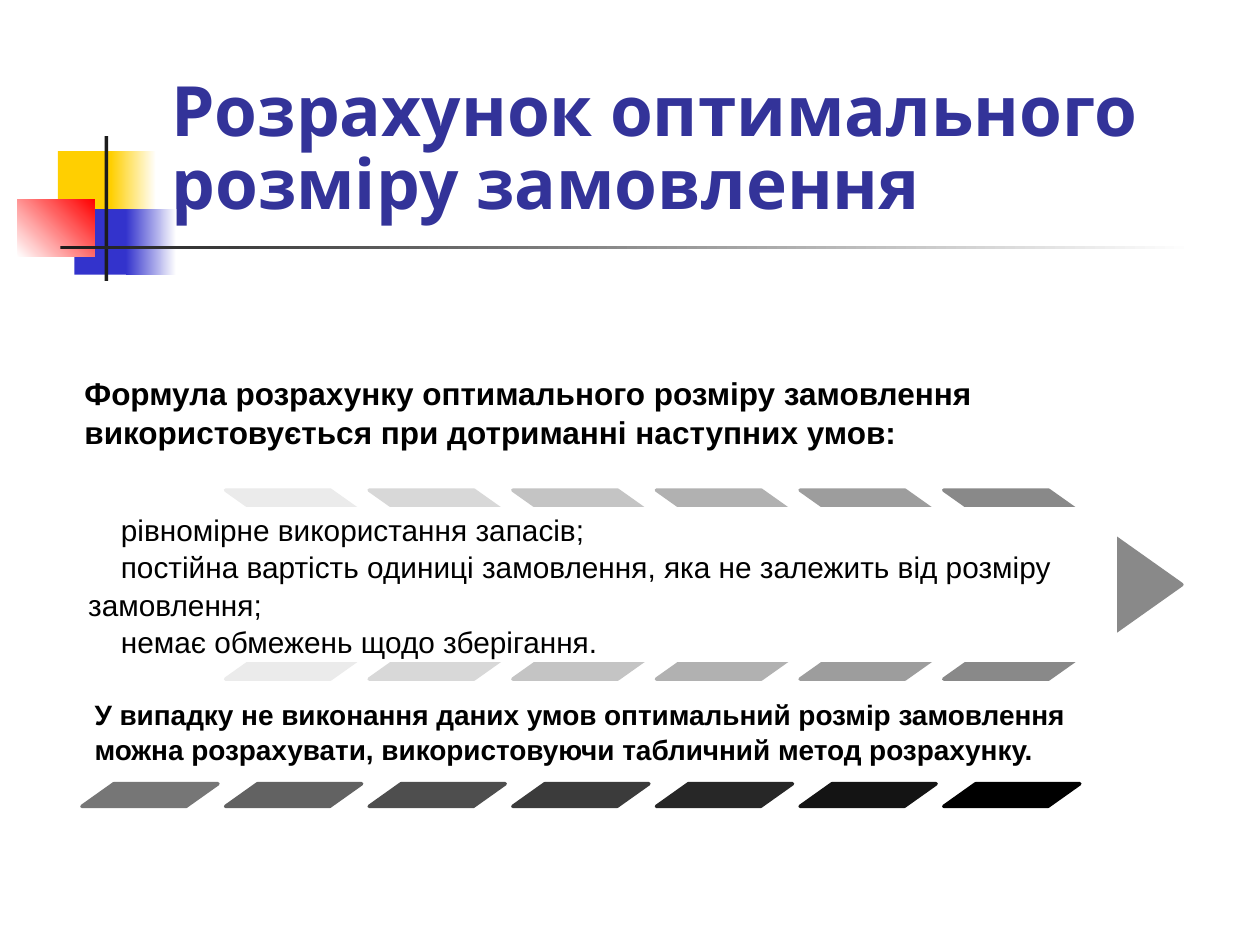
from pptx import Presentation
from pptx.dml.color import RGBColor
from pptx.enum.shapes import MSO_SHAPE
from pptx.enum.text import MSO_ANCHOR, MSO_AUTO_SIZE, PP_ALIGN
from pptx.util import Inches, Pt

BLACK = RGBColor(0x00, 0x00, 0x00)
WHITE = RGBColor(0xFF, 0xFF, 0xFF)
YELLOW = RGBColor(0xFF, 0xCF, 0x01)
BLUE = RGBColor(0x33, 0x33, 0xCC)
RED = RGBColor(0xFF, 0x00, 0x00)
CHARCOAL = RGBColor(0x1C, 0x1C, 0x1C)
TITLE_COLOR = RGBColor(0x33, 0x33, 0x99)
CHEVRON_GRAYS = [RGBColor(level, level, level)
                 for level in (0xFF, 0xEB, 0xD8, 0xC4, 0xB1, 0x9D, 0x89)]
STRIPE_GRAYS = [RGBColor(level, level, level)
                for level in (0x76, 0x62, 0x4E, 0x3B, 0x27, 0x14, 0x00)]

GRID_LEFT = 0.65
COLUMN = 1.14
CHEVRON_TOP = 3.89
STRIPE_TOP = 6.22

presentation = Presentation()
presentation.slide_width = Inches(10)
presentation.slide_height = Inches(7.5)
slide = presentation.slides.add_slide(presentation.slide_layouts[5])


def add_block(kind, box, color, end_color=None, angle=0, outlined=False):
    """Add a preset shape, solid or fading from color to end_color."""
    shape = slide.shapes.add_shape(kind, *[Inches(length) for length in box])
    shape.shadow.inherit = False
    if end_color is None:
        shape.fill.solid()
        shape.fill.fore_color.rgb = color
    else:
        shape.fill.gradient()
        shape.fill.gradient_angle = angle
        for stop, stop_color, position in zip(
                shape.fill.gradient_stops, (color, end_color), (0, 1)):
            stop.color.rgb = stop_color
            stop.position = position
    if outlined:
        shape.line.color.rgb = color
        shape.line.width = Pt(2)
    else:
        shape.line.fill.background()
    return shape


def add_text(box, lines, size, anchor, margin, bold=False, indent=0):
    text_box = slide.shapes.add_textbox(*[Inches(length) for length in box])
    frame = text_box.text_frame
    frame.word_wrap = True
    frame.vertical_anchor = anchor
    frame.margin_left = frame.margin_right = Inches(margin)
    frame.margin_top = frame.margin_bottom = Inches(margin)
    for index, line in enumerate(lines):
        paragraph = frame.add_paragraph() if index else frame.paragraphs[0]
        paragraph.line_spacing = 1.05
        if indent:
            paragraph._p.get_or_add_pPr().set("indent", str(Inches(indent)))
        run = paragraph.add_run()
        run.text = line
        run.font.name = "Arial"
        run.font.size = Pt(size)
        run.font.bold = bold
        run.font.color.rgb = BLACK


# Corner ornament and rule under the title
for box, color, end_color, angle in (
        ((0.46, 1.2, 0.48, 0.52), YELLOW, None, 0),
        ((0.88, 1.2, 0.36, 0.52), YELLOW, WHITE, 0),
        ((0.59, 1.66, 0.46, 0.52), BLUE, None, 0),
        ((1, 1.66, 0.4, 0.52), BLUE, WHITE, 0),
        ((0.14, 1.58, 0.61, 0.46), WHITE, RED, 45),
        ((0.83, 1.08, 0.03, 1.15), CHARCOAL, None, 0),
        ((0.48, 1.95, 9, 0.03), CHARCOAL, WHITE, 0)):
    add_block(MSO_SHAPE.RECTANGLE, box, color, end_color, angle)

# Title
title = slide.shapes.title
title.left, title.top = Inches(1.26), Inches(0.23)
title.width, title.height = Inches(8.52), Inches(1.6)
title_frame = title.text_frame
title_frame.auto_size = MSO_AUTO_SIZE.NONE
title_frame.vertical_anchor = MSO_ANCHOR.BOTTOM
paragraph = title_frame.paragraphs[0]
paragraph.alignment = PP_ALIGN.LEFT
paragraph.line_spacing = 0.88
run = paragraph.add_run()
run.text = "Розрахунок оптимального розміру замовлення"
run.font.name = "Karla"
run.font.size = Pt(39.6)
run.font.bold = True
run.font.color.rgb = TITLE_COLOR

# Chevrons behind the list of conditions
add_text((0.6, 2.28, 8.09, 1.37),
         ["Формула розрахунку оптимального розміру замовлення "
          "використовується при дотриманні наступних умов:"],
         18, MSO_ANCHOR.BOTTOM, 0.07, bold=True)
for column, gray in enumerate(CHEVRON_GRAYS):
    chevron = add_block(
        MSO_SHAPE.CHEVRON,
        (GRID_LEFT + column * COLUMN, CHEVRON_TOP, 1.89, 1.5),
        gray, outlined=True)
    chevron.adjustments[0] = 0.706
conditions_box = (GRID_LEFT, CHEVRON_TOP + 0.15, 8.2, 1.2)
add_block(MSO_SHAPE.RECTANGLE, conditions_box, WHITE, outlined=True)
add_text(conditions_box,
         ["рівномірне використання запасів;",
          "постійна вартість одиниці замовлення, яка не залежить від розміру "
          "замовлення;",
          "немає обмежень щодо зберігання."],
         17, MSO_ANCHOR.MIDDLE, 0.05, indent=0.26)

# Closing remark over a row of stripes
add_text((0.68, 5.45, 8.09, 0.7),
         ["У випадку не виконання даних умов оптимальний розмір замовлення "
          "можна розрахувати, використовуючи табличний метод розрахунку."],
         16, MSO_ANCHOR.BOTTOM, 0.07, bold=True)
for column, gray in enumerate(STRIPE_GRAYS):
    stripe = add_block(
        MSO_SHAPE.PARALLELOGRAM,
        (GRID_LEFT + column * COLUMN, STRIPE_TOP, 1.08, 0.18),
        gray, outlined=True)
    stripe.adjustments[0] = 1.408

presentation.save("out.pptx")
